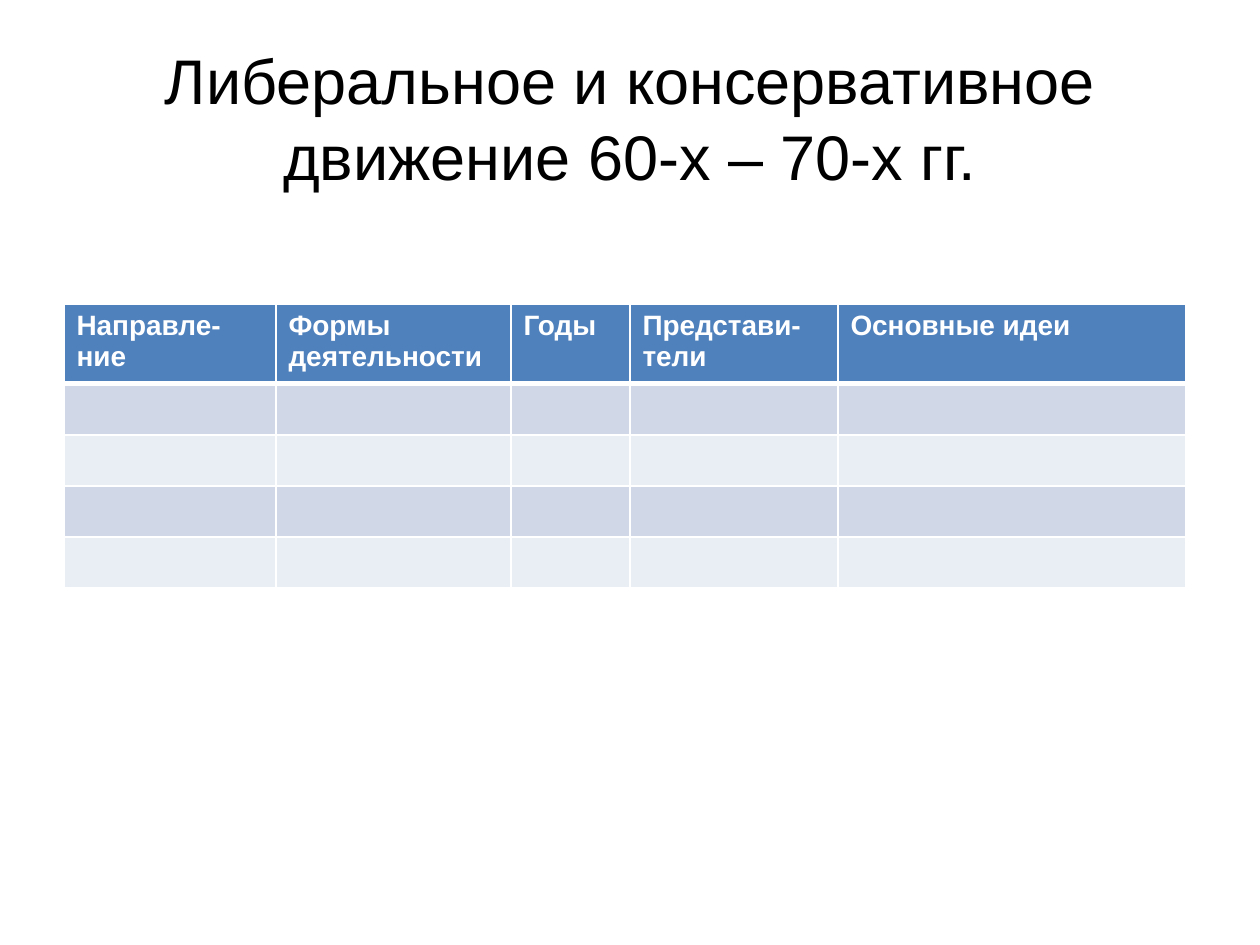
"""Build a slide with a title and a table of political movements to fill in."""
from dataclasses import dataclass

from lxml.etree import SubElement
from pptx import Presentation
from pptx.dml.color import RGBColor
from pptx.enum.text import MSO_ANCHOR as Anchor, PP_ALIGN as Align
from pptx.oxml.ns import qn
from pptx.util import Pt

EMU_PER_PX = 914400 / 126


def px(length):
    return round(length * EMU_PER_PX)


@dataclass(frozen=True)
class Theme:
    font: str = "Arial"
    title_size: int = 36
    header_size: int = 16
    text: str = "000000"
    light: str = "FFFFFF"
    header: str = "4F81BD"
    bands: tuple = ("D0D8E8", "E9EDF4")
    rule: int = 1
    header_rule: int = 3


class SlideBuilder:
    def __init__(self, slide, theme):
        self.slide = slide
        self.theme = theme

    def add_run(self, paragraph, text, size, color, bold=False):
        run = paragraph.add_run()
        run.text = text
        run.font.name = self.theme.font
        run.font.size = Pt(size)
        run.font.bold = bold
        run.font.color.rgb = RGBColor.from_string(color)

    def title(self, text, left, top, width, height):
        shape = self.slide.shapes.add_textbox(px(left), px(top), px(width), px(height))
        frame = shape.text_frame
        frame.word_wrap = True
        frame.vertical_anchor = Anchor.MIDDLE
        paragraph = frame.paragraphs[0]
        paragraph.alignment = Align.CENTER
        self.add_run(paragraph, text, self.theme.title_size, self.theme.text)

    def paint_cell(self, cell, color, top_rule, bottom_rule):
        cell.fill.solid()
        cell.fill.fore_color.rgb = RGBColor.from_string(color)
        properties = cell._tc.get_or_add_tcPr()
        rule = self.theme.rule
        sides = {"L": rule, "R": rule, "T": top_rule, "B": bottom_rule}
        for index, (side, width) in enumerate(sides.items()):
            line = SubElement(properties, qn(f"a:ln{side}"), w=str(Pt(width)))
            fill = SubElement(line, qn("a:solidFill"))
            SubElement(fill, qn("a:srgbClr"), val=self.theme.light)
            properties.insert(index, line)

    def table(self, headers, left, top, widths, heights):
        theme = self.theme
        table = self.slide.shapes.add_table(
            len(heights), len(widths), px(left), px(top), px(sum(widths)), px(sum(heights))
        ).table
        for column, width in zip(table.columns, widths):
            column.width = px(width)
        for index, (row, height) in enumerate(zip(table.rows, heights)):
            row.height = px(height)
            color = theme.bands[(index - 1) % 2] if index else theme.header
            top_rule = theme.header_rule if index == 1 else theme.rule
            bottom_rule = theme.rule if index else theme.header_rule
            for cell in row.cells:
                self.paint_cell(cell, color, top_rule, bottom_rule)
        for cell, lines in zip(table.rows[0].cells, headers):
            frame = cell.text_frame
            for index, text in enumerate(lines):
                paragraph = frame.add_paragraph() if index else frame.paragraphs[0]
                self.add_run(paragraph, text, theme.header_size, theme.light, bold=True)


def main():
    presentation = Presentation()
    presentation.slide_width = px(1260)
    presentation.slide_height = px(945)
    slide = presentation.slides.add_slide(presentation.slide_layouts[6])
    builder = SlideBuilder(slide, Theme())
    builder.title(
        "Либеральное и консервативное движение 60-х – 70-х гг.", 63, 38, 1134, 158
    )
    headers = [
        ("Направле-", "ние"),
        ("Формы деятельности",),
        ("Годы",),
        ("Представи-", "тели"),
        ("Основные идеи",),
    ]
    builder.table(headers, 64, 304, [212, 235, 119, 208, 348], [74] + [51] * 4)
    presentation.save("out.pptx")


if __name__ == "__main__":
    main()
